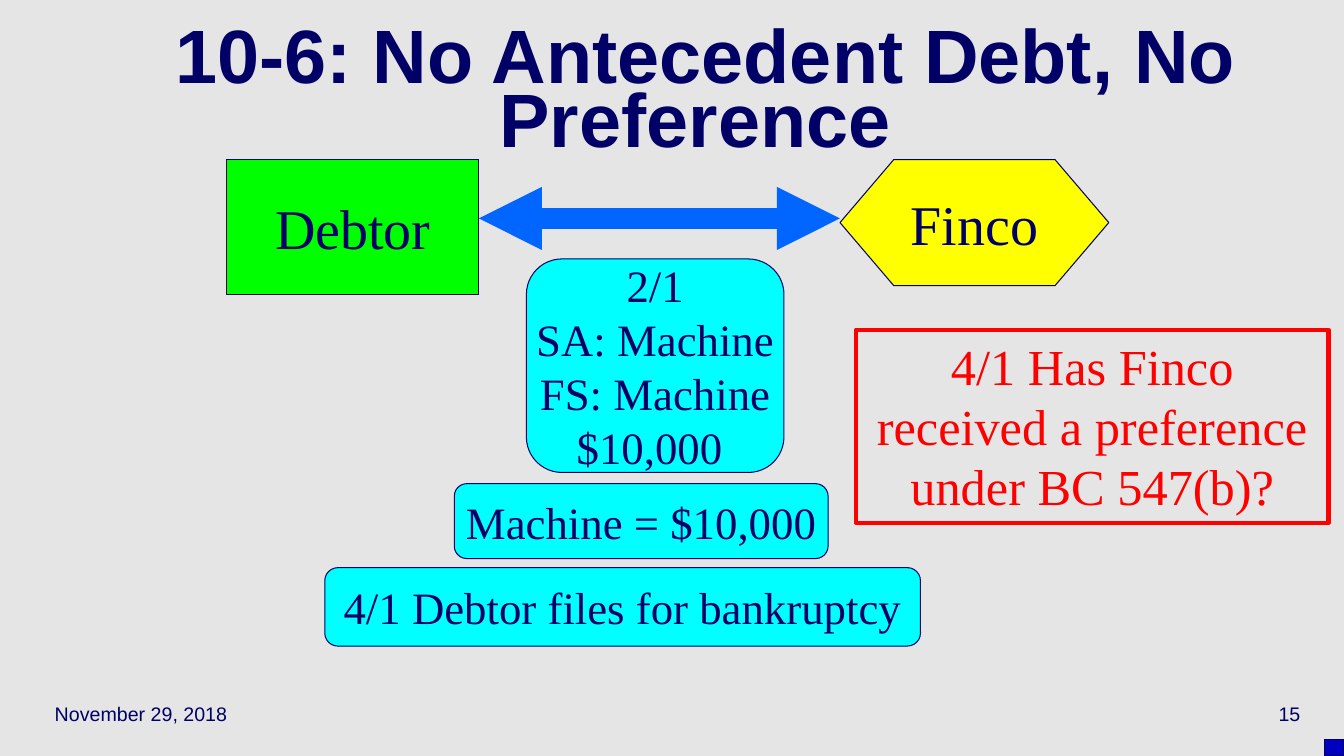
"""Build the slide on antecedent debt and preferences."""
from dataclasses import dataclass
from typing import NamedTuple, Optional

from lxml import etree
from pptx import Presentation
from pptx import util as u
from pptx.dml.color import RGBColor
from pptx.enum import shapes, text
from pptx.oxml import ns

Kind = shapes.MSO_SHAPE
Align = text.PP_ALIGN
Anchor = text.MSO_ANCHOR


@dataclass(frozen=True)
class Theme:
    """Hold the colours, fonts and type sizes."""
    back: str = "E5E5E5"
    navy: str = "000066"
    green: str = "00FF00"
    yellow: str = "FFFF00"
    cyan: str = "00FFFF"
    blue: str = "0066FF"
    red: str = "FF0000"
    corner: str = "0000C0"
    sans: str = "Arial"
    serif: str = "Times New Roman"
    title: int = 54
    party: int = 40
    asked: int = 36
    fact: int = 32
    foot: int = 14


THEME = Theme()


class Area(NamedTuple):
    """Give a place and size in points."""
    left: float
    top: float
    width: float
    height: float


@dataclass(frozen=True)
class Label:
    """Describe a plain text box."""
    area: Area
    words: str
    size: int
    align: Align
    bold: bool = False
    space: Optional[float] = None


@dataclass(frozen=True)
class Box:
    """Describe a drawn shape with its lines of text."""
    area: Area
    kind: Kind
    fill: Optional[str]
    lines: tuple[str, ...] = ()
    size: int = THEME.fact
    ink: str = THEME.navy
    edge: str = THEME.navy
    weight: float = 0.75
    wrap: bool = False
    anchor: Anchor = Anchor.MIDDLE


LABELS = (
    Label(Area(32, 492, 200, 36), "November 29, 2018", THEME.foot, Align.LEFT),
    Label(Area(736, 492, 200, 36), "15", THEME.foot, Align.RIGHT),
    Label(Area(64, 24, 880, 90), "10-6: No Antecedent Debt, No Preference ",
          THEME.title, Align.CENTER, True, 0.7),
)
ROUND = Kind.FLOWCHART_ALTERNATE_PROCESS
BOXES = (
    Box(Area(162, 114, 180, 96), Kind.FLOWCHART_PROCESS, THEME.green,
        ("Debtor",), THEME.party),
    Box(Area(600, 114, 192, 90), Kind.FLOWCHART_PREPARATION, THEME.yellow,
        ("Finco",), THEME.party),
    Box(Area(376, 185, 184, 152.5), ROUND, THEME.cyan,
        ("2/1", "SA: Machine", "FS: Machine", "$10,000 ")),
    Box(Area(611.5, 235.5, 337.5, 138), Kind.RECTANGLE, None,
        ("4/1 Has Finco received a preference under BC 547(b)?",),
        THEME.asked, THEME.red, THEME.red, 3, True, Anchor.TOP),
    Box(Area(324.5, 345.5, 267, 53.5), ROUND, THEME.cyan,
        ("Machine = $10,000",)),
    Box(Area(232, 405.5, 425.5, 56), ROUND, THEME.cyan,
        ("4/1 Debtor files for bankruptcy",)),
    Box(Area(946, 528, 14, 12), Kind.RECTANGLE, THEME.corner),
)


def rgb(code: str) -> RGBColor:
    """Turn a hex code into a colour."""
    return RGBColor.from_string(code)


def place(area: Area) -> list[u.Length]:
    """Turn an area into slide lengths."""
    return [u.Pt(side) for side in area]


def write(para, words: str, font: str, size: int, ink: str,
          align: Align, bold: bool = False) -> None:
    """Add one styled run to a paragraph."""
    para.alignment = align
    run = para.add_run()
    run.text = words
    run.font.name = font
    run.font.size = u.Pt(size)
    run.font.bold = bold
    run.font.color.rgb = rgb(ink)


def draw_label(slide, label: Label) -> None:
    """Draw a plain text box."""
    frame = slide.shapes.add_textbox(*place(label.area)).text_frame
    frame.word_wrap = True
    frame.vertical_anchor = Anchor.MIDDLE
    para = frame.paragraphs[0]
    if label.space:
        para.line_spacing = label.space
    write(para, label.words, THEME.sans, label.size, THEME.navy,
          label.align, label.bold)


def draw_box(slide, box: Box) -> None:
    """Draw a shape and its text."""
    shape = slide.shapes.add_shape(box.kind, *place(box.area))
    shape.shadow.inherit = False
    if box.fill:
        shape.fill.solid()
        shape.fill.fore_color.rgb = rgb(box.fill)
    else:
        shape.fill.background()
    shape.line.color.rgb = rgb(box.edge)
    shape.line.width = u.Pt(box.weight)
    frame = shape.text_frame
    frame.word_wrap = box.wrap
    frame.vertical_anchor = box.anchor
    for row, words in enumerate(box.lines):
        para = frame.add_paragraph() if row else frame.paragraphs[0]
        write(para, words, THEME.serif, box.size, box.ink, Align.CENTER)


def draw_arrow(slide, start: float, end: float, level: float) -> None:
    """Draw a level arrow with a head at both ends."""
    arrow = slide.shapes.add_connector(
        shapes.MSO_CONNECTOR.STRAIGHT,
        u.Pt(start), u.Pt(level), u.Pt(end), u.Pt(level))
    arrow.line.color.rgb = rgb(THEME.blue)
    arrow.line.width = u.Pt(15)
    props = arrow.line._get_or_add_ln()
    for tip in ("a:headEnd", "a:tailEnd"):
        etree.SubElement(props, ns.qn(tip), type="triangle")
    etree.SubElement(arrow._element.spPr, ns.qn("a:effectLst"))


def main() -> None:
    """Build and save the slide."""
    deck = Presentation()
    deck.slide_width, deck.slide_height = u.Pt(960), u.Pt(540)
    slide = deck.slides.add_slide(deck.slide_layouts[6])
    slide.background.fill.solid()
    slide.background.fill.fore_color.rgb = rgb(THEME.back)
    for label in LABELS:
        draw_label(slide, label)
    debtor, finco, *facts = BOXES
    draw_box(slide, debtor)
    draw_box(slide, finco)
    draw_arrow(slide, debtor.area.left + debtor.area.width,
               finco.area.left, 156)
    for box in facts:
        draw_box(slide, box)
    deck.save("out.pptx")


if __name__ == "__main__":
    main()
